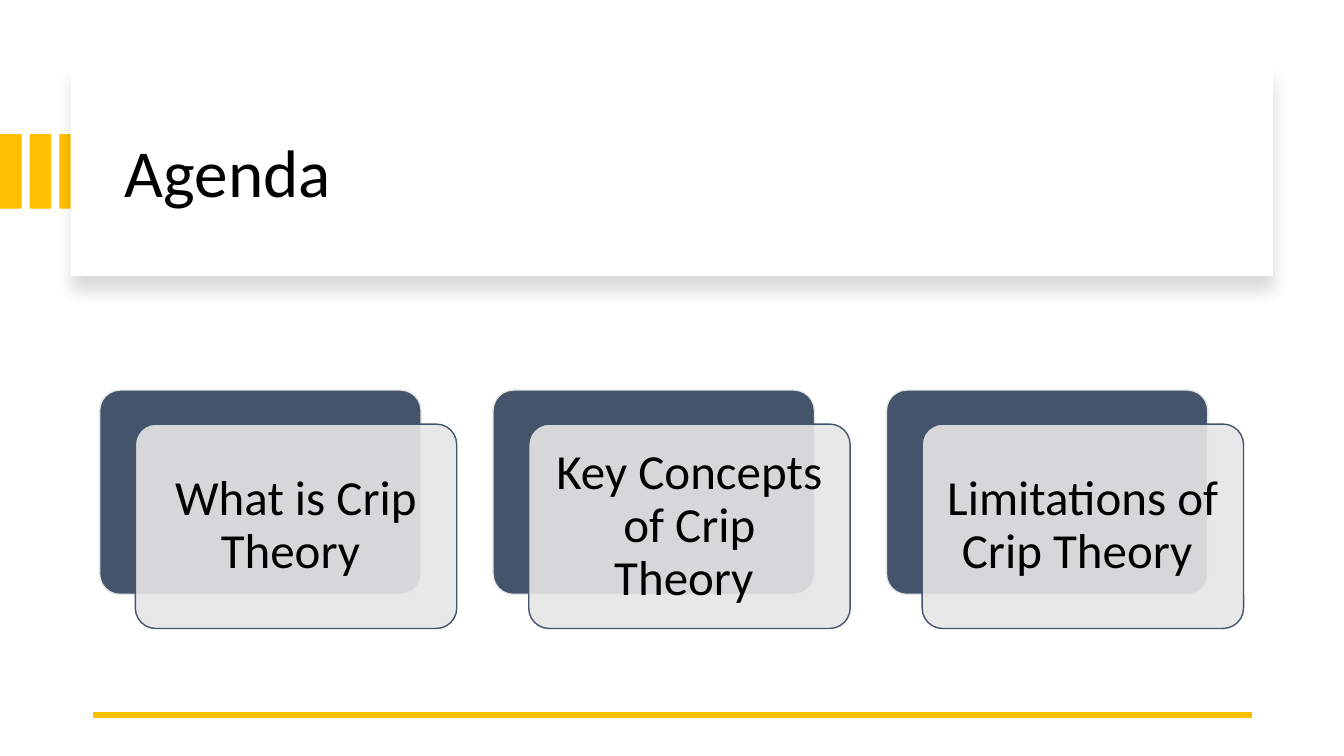
from lxml import etree
from pptx import Presentation
from pptx.dml.color import RGBColor
from pptx.enum.shapes import MSO_CONNECTOR, MSO_SHAPE
from pptx.enum.text import MSO_ANCHOR, MSO_AUTO_SIZE, PP_ALIGN
from pptx.oxml.ns import qn
from pptx.util import Pt

RECT = MSO_SHAPE.RECTANGLE
ROUND = MSO_SHAPE.ROUNDED_RECTANGLE
LEFT, CENTER = PP_ALIGN.LEFT, PP_ALIGN.CENTER

TITLE = "Agenda"
TOPICS = [
    "What is Crip Theory ",
    "Key Concepts of Crip Theory ",
    "Limitations of Crip Theory ",
]
COLORS = {
    "gold": "FFC000",
    "white": "FFFFFF",
    "slate": "44546A",
    "mist": "E7E6E6",
    "black": "000000",
}
FONT = "Calibri"

CARD_W, CARD_H = 229.6, 146
CARD_X, CARD_Y, CARD_STEP = 71.2, 278.6, 281
SHIFT_X, SHIFT_Y = 25.5, 24.3
INSET = 4.25
BAR_W, BAR_STEP = 15.4, 21.2


def color(name):
    return RGBColor.from_string(COLORS[name])


def add_box(slide, kind, x, y, w, h, fill, line=None):
    box = slide.shapes.add_shape(kind, Pt(x), Pt(y), Pt(w), Pt(h))
    box.shadow.inherit = False
    box.fill.solid()
    box.fill.fore_color.rgb = color(fill)
    if line:
        box.line.color.rgb = color(line)
        box.line.width = Pt(1)
    else:
        box.line.fill.background()
    if kind == ROUND:
        box.adjustments[0] = 0.1
    return box


def set_alpha(parent, percent):
    rgb = next(parent.iter(qn("a:srgbClr")))
    etree.SubElement(rgb, qn("a:alpha"), val=str(percent * 1000))


def add_shadow(box):
    effects = box.element.spPr.find(qn("a:effectLst"))
    shadow = etree.SubElement(
        effects, qn("a:outerShdw"), blurRad=str(Pt(11)), dist=str(Pt(10)),
        dir="5400000", algn="t", rotWithShape="0")
    etree.SubElement(shadow, qn("a:srgbClr"), val=COLORS["black"])
    set_alpha(shadow, 15)


def put_text(shape, text, size, align=LEFT, pad=None):
    frame = shape.text_frame
    frame.word_wrap = True
    frame.auto_size = MSO_AUTO_SIZE.NONE
    frame.vertical_anchor = MSO_ANCHOR.MIDDLE
    if pad is not None:
        frame.margin_left = frame.margin_right = Pt(pad)
        frame.margin_top = frame.margin_bottom = Pt(pad)
    para = frame.paragraphs[0]
    para.alignment = align
    para.line_spacing = 0.9
    run = para.add_run()
    run.text = text
    run.font.name = FONT
    run.font.size = Pt(size)
    run.font.color.rgb = color("black")


def add_header(slide):
    for i in range(3):
        add_box(slide, RECT, i * BAR_STEP, 95.8, BAR_W, 53.3, "gold")
    panel = add_box(slide, RECT, 50.4, 48.2, 859, 149, "white")
    add_shadow(panel)
    title = slide.shapes.title
    title.left, title.top = Pt(82), Pt(64)
    title.width, title.height = Pt(801.4), Pt(122.4)
    put_text(title, TITLE, 48)
    panel.element.addnext(title.element)


def add_rule(slide):
    rule = slide.shapes.add_connector(
        MSO_CONNECTOR.STRAIGHT, Pt(894.2), Pt(510.5), Pt(66.2), Pt(510.5))
    rule.line.color.rgb = color("gold")
    rule.line.width = Pt(4.5)
    etree.SubElement(rule.element.spPr, qn("a:effectLst"))


def add_card(slide, x, topic):
    add_box(slide, ROUND, x, CARD_Y, CARD_W, CARD_H, "slate", line="mist")
    x, y = x + SHIFT_X, CARD_Y + SHIFT_Y
    front = add_box(slide, ROUND, x, y, CARD_W, CARD_H, "mist", line="slate")
    set_alpha(front.element.spPr.find(qn("a:solidFill")), 90)
    label = slide.shapes.add_textbox(
        Pt(x + INSET), Pt(y + INSET),
        Pt(CARD_W - 2 * INSET), Pt(CARD_H - 2 * INSET))
    put_text(label, topic, 35, align=CENTER, pad=10.5)


def main():
    deck = Presentation()
    deck.slide_width, deck.slide_height = Pt(960), Pt(540)
    slide = deck.slides.add_slide(deck.slide_layouts[5])
    add_header(slide)
    add_rule(slide)
    for i, topic in enumerate(TOPICS):
        add_card(slide, CARD_X + i * CARD_STEP, topic)
    deck.save("out.pptx")


if __name__ == "__main__":
    main()
